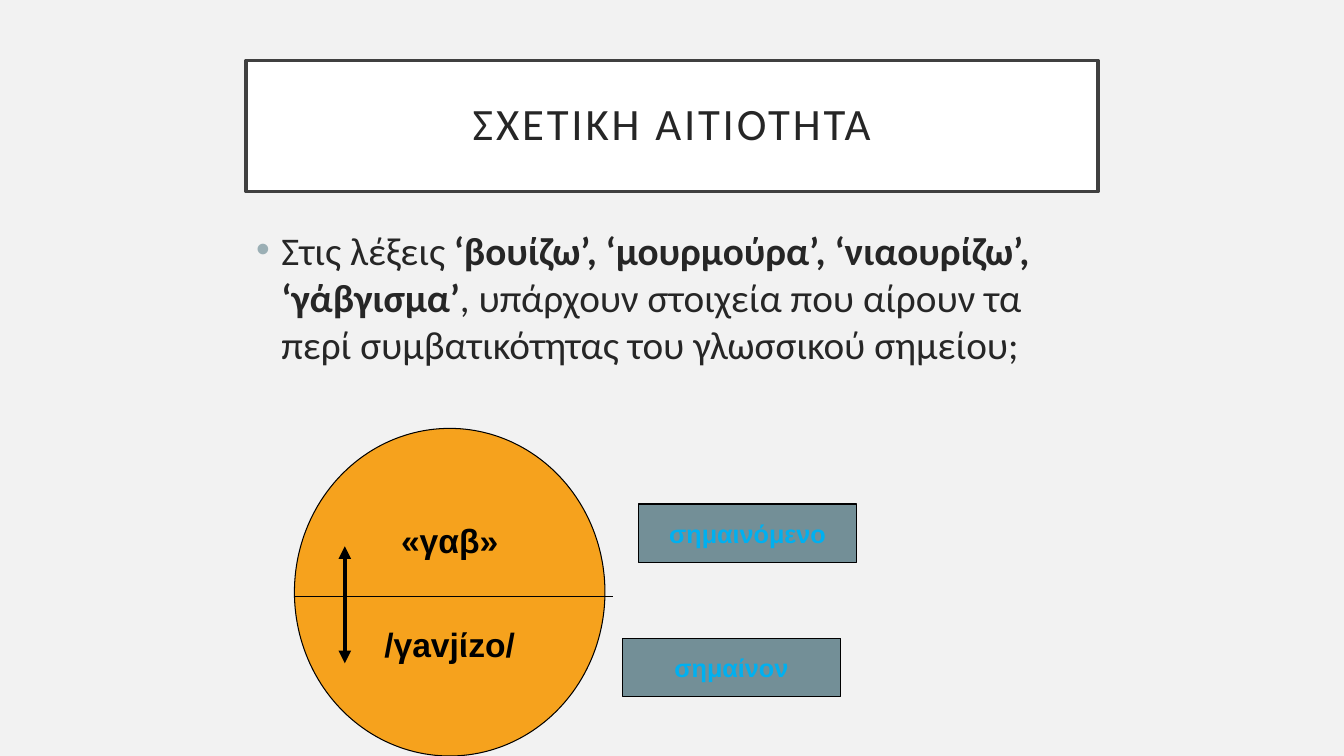
from dataclasses import dataclass
from pptx import Presentation
from pptx.dml.color import RGBColor
from pptx.enum.shapes import MSO_CONNECTOR, MSO_SHAPE
from pptx.enum.text import MSO_ANCHOR, MSO_AUTO_SIZE, PP_ALIGN
from pptx.oxml.ns import qn
from pptx.util import Inches, Pt
from lxml.etree import SubElement

BLACK = "000000"
INK = "262626"


@dataclass
class Node:
    kind: MSO_SHAPE
    box: tuple[float, float, float, float]
    fill: str
    color: str
    size: int
    lines: list[str]
    gap: int = 0


@dataclass
class Rule:
    start: tuple[float, float]
    end: tuple[float, float]
    width: float
    heads: bool = False


def paint(target, code: str) -> None:
    target.rgb = RGBColor.from_string(code)


def place(shape, box: tuple[float, float, float, float]) -> None:
    shape.left, shape.top, shape.width, shape.height = map(Inches, box)


def coat(shape, fill: str, line: str, width: float) -> None:
    shape.fill.solid()
    paint(shape.fill.fore_color, fill)
    paint(shape.line.color, line)
    shape.line.width = Pt(width)


def add_run(para, text: str, size: int, face: str, color: str, bold: bool = False):
    run = para.add_run()
    run.text = text
    run.font.size = Pt(size)
    run.font.name = face
    run.font.bold = bold
    paint(run.font.color, color)
    return run


def draw_title(shape) -> None:
    place(shape, (2.44, 0.6, 8.45, 1.3))
    coat(shape, "FFFFFF", "404040", 2.5)
    frame = shape.text_frame
    frame.auto_size = MSO_AUTO_SIZE.NONE
    frame.vertical_anchor = MSO_ANCHOR.MIDDLE
    frame.margin_left = frame.margin_right = Inches(0.2)
    frame.margin_top = frame.margin_bottom = Inches(0.2)
    para = frame.paragraphs[0]
    para.alignment = PP_ALIGN.CENTER
    para.line_spacing = 0.9
    run = add_run(para, "ΣΧΕΤΙΚΗ ΑΙΤΙΟΤΗΤΑ", 32, "Calibri", INK)
    run.font._element.set("spc", "200")


def draw_body(shape) -> None:
    place(shape, (2.44, 2.19, 8.45, 3.39))
    frame = shape.text_frame
    frame.auto_size = MSO_AUTO_SIZE.NONE
    frame.vertical_anchor = MSO_ANCHOR.TOP
    para = frame.paragraphs[0]
    para.space_before = Pt(0)
    props = para._p.get_or_add_pPr()
    props.set("marL", str(Inches(0.25)))
    props.set("indent", str(-Inches(0.25)))
    tint = SubElement(props, qn("a:buClr"))
    SubElement(tint, qn("a:srgbClr"), val="9BAFB5")
    SubElement(props, qn("a:buFont"), typeface="Arial")
    SubElement(props, qn("a:buChar"), char="•")
    parts = [
        ("Στις λέξεις ", False),
        ("‘βουίζω’, ‘μουρμούρα’, ‘νιαουρίζω’, ‘γάβγισμα’", True),
        (", υπάρχουν στοιχεία που αίρουν τα περί συμβατικότητας του γλωσσικού σημείου;", False),
    ]
    for text, bold in parts:
        add_run(para, text, 28, "Calibri", INK, bold)


def draw_node(slide, node: Node) -> None:
    shape = slide.shapes.add_shape(node.kind, *map(Inches, node.box))
    shape.shadow.inherit = False
    coat(shape, node.fill, BLACK, 0.75)
    frame = shape.text_frame
    frame.word_wrap = False
    frame.vertical_anchor = MSO_ANCHOR.MIDDLE
    for i, text in enumerate(node.lines):
        para = frame.add_paragraph() if i else frame.paragraphs[0]
        para.alignment = PP_ALIGN.CENTER
        if i:
            para.space_before = Pt(node.gap)
        add_run(para, text, node.size, "Arial", node.color, True)


def draw_rule(slide, rule: Rule) -> None:
    ends = map(Inches, rule.start + rule.end)
    line = slide.shapes.add_connector(MSO_CONNECTOR.STRAIGHT, *ends)
    paint(line.line.color, BLACK)
    line.line.width = Pt(rule.width)
    if rule.heads:
        for tag in ("a:headEnd", "a:tailEnd"):
            SubElement(line.line._get_or_add_ln(), qn(tag), type="triangle")
    SubElement(line._element.spPr, qn("a:effectLst"))


def label(left: float, top: float, text: str) -> Node:
    return Node(MSO_SHAPE.RECTANGLE, (left, top, 2.17, 0.58), "738F97", "00B0F0", 18, [text])


def main() -> None:
    deck = Presentation()
    deck.slide_width, deck.slide_height = Inches(13.33), Inches(7.5)
    slide = deck.slides.add_slide(deck.slide_layouts[1])
    slide.background.fill.solid()
    paint(slide.background.fill.fore_color, "F2F2F2")
    draw_title(slide.shapes.title)
    draw_body(slide.placeholders[1])
    sign = Node(MSO_SHAPE.OVAL, (2.92, 4.25, 3.08, 3.25), "F6A21D", BLACK, 24,
                ["«γαβ»", "/γavjίzo/"], 45)
    draw_node(slide, sign)
    draw_rule(slide, Rule((2.92, 5.92), (6.08, 5.92), 0.75))
    for node in (label(6.33, 5, "σημαινόμενο"), label(6.17, 6.33, "σημαίνον")):
        draw_node(slide, node)
    draw_rule(slide, Rule((3.42, 5.42), (3.42, 6.58), 3, True))
    deck.save("out.pptx")


if __name__ == "__main__":
    main()
